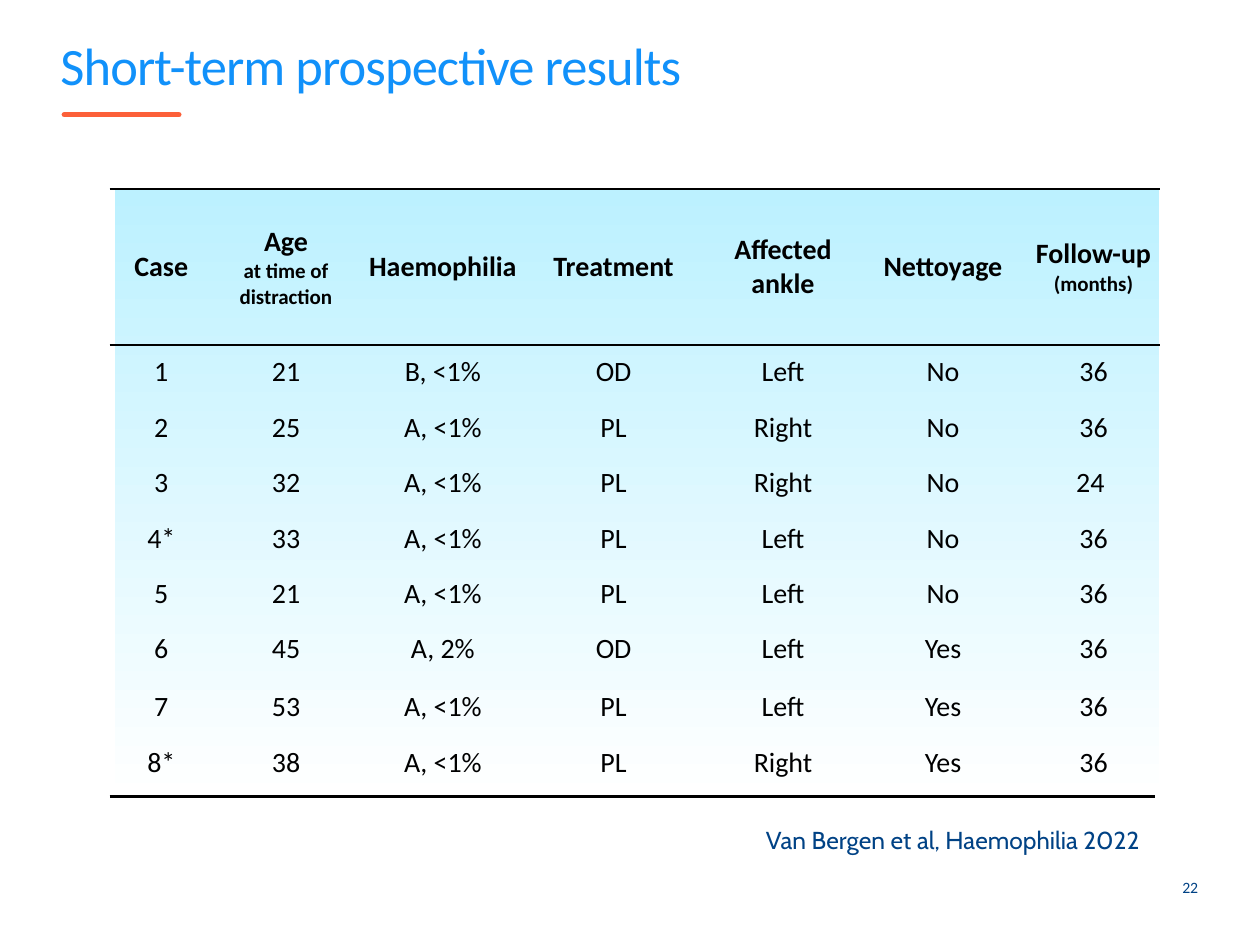
from dataclasses import dataclass

from lxml import etree
from pptx import Presentation
from pptx.dml.color import RGBColor
from pptx.enum.shapes import MSO_CONNECTOR, MSO_SHAPE
from pptx.enum.text import MSO_ANCHOR, PP_ALIGN
from pptx.oxml.ns import qn
from pptx.util import Inches, Pt

LINE = MSO_CONNECTOR.STRAIGHT
RECT = MSO_SHAPE.RECTANGLE
MIDDLE = MSO_ANCHOR.MIDDLE
CENTER, RIGHT = PP_ALIGN.CENTER, PP_ALIGN.RIGHT
NO_STYLE = "{2D5ABB26-0587-4C30-8999-92F81FD0307C}"


@dataclass(frozen=True)
class Theme:
    blue: str = "1191FA"
    navy: str = "004285"
    orange: str = "FC6039"
    black: str = "000000"
    sky: str = "BCF1FF"
    white: str = "FFFFFF"
    body_font: str = "Calibri"
    cite_font: str = "Cabin"
    title: int = 30
    cell: int = 16
    cite: int = 14
    small: int = 12
    number: int = 9


T = Theme()


def add_run(p, text, size, color, font=T.body_font, bold=False):
    r = p.add_run()
    r.text = text
    r.font.name, r.font.size, r.font.bold = font, Pt(size), bold
    r.font.color.rgb = RGBColor.from_string(color)
    return r


def add_line(x1, x2, y, color, width):
    ln = slide.shapes.add_connector(LINE, Inches(x1), Inches(y), Inches(x2), Inches(y))
    ln.line.color.rgb = RGBColor.from_string(color)
    ln.line.width = Pt(width)
    etree.SubElement(ln._element.spPr, qn("a:effectLst"))
    return ln


prs = Presentation()
prs.slide_width, prs.slide_height = Inches(10), Inches(7.5)
slide = prs.slides.add_slide(prs.slide_layouts[6])

# Title and its underline
rule = add_line(0.51, 1.42, 0.91, T.orange, 3)
rule.line._get_or_add_ln().set("cap", "rnd")
title = slide.shapes.add_textbox(Inches(0.48), Inches(0.36), Inches(9.03), Inches(0.64))
number = slide.shapes.add_textbox(Inches(9.21), Inches(6.91), Inches(0.3), Inches(0.27))
for box in (title, number):
    tf = box.text_frame
    tf.word_wrap = True
    tf.margin_left = tf.margin_right = tf.margin_top = tf.margin_bottom = 0
p = title.text_frame.paragraphs[0]
p.line_spacing = 0.8
r = add_run(p, "Short-term prospective results", T.title, T.blue)
r.font._element.set("spc", "-50")

# Slide number
number.text_frame.vertical_anchor = MIDDLE
p = number.text_frame.paragraphs[0]
p.alignment = RIGHT
add_run(p, "22", T.number, T.navy)

# Gradient panel behind the table
panel = slide.shapes.add_shape(RECT, Inches(0.91), Inches(1.49), Inches(8.29), Inches(4.87))
panel.shadow.inherit = False
panel.line.fill.background()
panel.fill.gradient()
panel.fill.gradient_angle = 270
for stop, color, pos in zip(panel.fill.gradient_stops, (T.sky, T.white), (0, 1)):
    stop.color.rgb = RGBColor.from_string(color)
    stop.position = pos

# Case table: a header cell is a list of paragraphs, each a list of (text, size)
header = [
    [[("Case", T.cell)]],
    [[("Age", T.cell)], [("at time of distraction", T.small)]],
    [[("Haemophilia", T.cell)]],
    [[("Treatment", T.cell)]],
    [[("Affected ankle", T.cell)]],
    [[("Nettoyage", T.cell)]],
    [[("Follow-up ", T.cell), ("(months)", T.small)]],
]
cases = [
    ("1", "21", "B, <1%", "OD", "Left", "No", "36"),
    ("2", "25", "A, <1%", "PL", "Right", "No", "36"),
    ("3", "32", "A, <1%", "PL", "Right", "No", "24 "),
    ("4*", "33", "A, <1%", "PL", "Left", "No", "36"),
    ("5", "21", "A, <1%", "PL", "Left", "No", "36"),
    ("6", "45", "A, 2%", "OD", "Left", "Yes", "36"),
    ("7", "53", "A, <1%", "PL", "Left", "Yes", "36"),
    ("8*", "38", "A, <1%", "PL", "Right", "Yes", "36"),
]
rows = [header] + [[[[(value, T.cell)]] for value in case] for case in cases]
col_widths = [0.78, 1.2, 1.29, 1.42, 1.27, 1.27, 1.12]
row_heights = [1.23] + [0.44] * 6 + [0.48, 0.41]

table = slide.shapes.add_table(len(rows), len(header), Inches(0.89), Inches(1.5),
                               Inches(sum(col_widths)), Inches(sum(row_heights))).table
table.first_row = table.horz_banding = False
table._tbl.tblPr.find(qn("a:tableStyleId")).text = NO_STYLE
for col, width in zip(table.columns, col_widths):
    col.width = Inches(width)
for row, height in zip(table.rows, row_heights):
    row.height = Inches(height)

for i, row in enumerate(rows):
    for j, paragraphs in enumerate(row):
        cell = table.cell(i, j)
        cell.fill.background()
        cell.vertical_anchor = MIDDLE
        cell.margin_left = cell.margin_right = cell.margin_top = Inches(0.01)
        cell.margin_bottom = 0
        tf = cell.text_frame
        for k, runs in enumerate(paragraphs):
            p = tf.add_paragraph() if k else tf.paragraphs[0]
            p.alignment = CENTER
            for text, size in runs:
                add_run(p, text, size, T.black, bold=i == 0)

# Table rules: top, bottom, below the header
for right, y, width in ((9.21, 1.5, 1.5), (9.17, 6.32, 1.5), (9.21, 2.74, 1)):
    add_line(0.87, right, y, T.black, width)

# Citation
cite = slide.shapes.add_textbox(Inches(5.98), Inches(6.5), Inches(3.28), Inches(0.34))
cite.text_frame.word_wrap = False
add_run(cite.text_frame.paragraphs[0], "Van Bergen et al, Haemophilia 2022",
        T.cite, T.navy, T.cite_font)

prs.save("out.pptx")
